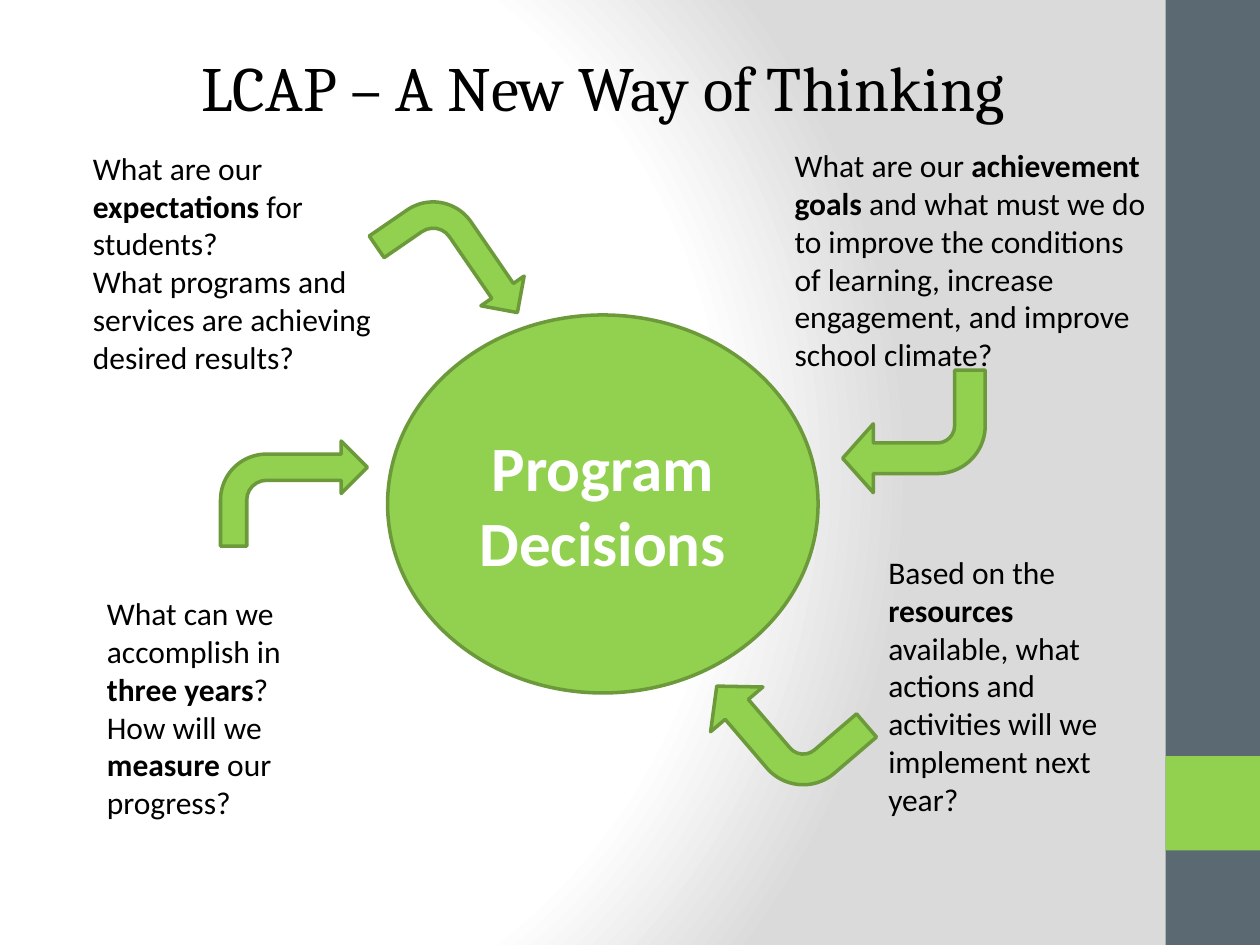
from pptx import Presentation
from pptx.dml.color import RGBColor
from pptx.enum.shapes import MSO_SHAPE
from pptx.enum.text import MSO_ANCHOR, MSO_AUTO_SIZE, PP_ALIGN
from pptx.oxml import parse_xml
from pptx.oxml.ns import nsdecls
from pptx.util import Pt

RECTANGLE, OVAL, BENT_ARROW = MSO_SHAPE.RECTANGLE, MSO_SHAPE.OVAL, MSO_SHAPE.BENT_ARROW
TOP, MIDDLE = MSO_ANCHOR.TOP, MSO_ANCHOR.MIDDLE
LEFT, CENTER = PP_ALIGN.LEFT, PP_ALIGN.CENTER
FIXED_SIZE = MSO_AUTO_SIZE.NONE

GREEN = RGBColor(0x92, 0xD0, 0x50)
DARK_GREEN = RGBColor(0x6C, 0x9A, 0x3B)
SLATE = RGBColor(0x5B, 0x69, 0x73)
GREY = RGBColor(0xDA, 0xDA, 0xDA)
BLACK = RGBColor(0, 0, 0)
WHITE = RGBColor(0xFF, 0xFF, 0xFF)

# Each question is a list of paragraphs; ** switches bold on and off
QUESTIONS = [
    ((46, 81.5, 180, 142), [
        "What are our **expectations** for students?",
        "What programs and services are achieving desired results?"]),
    ((447, 80, 215.5, 138), [
        "What are our **achievement goals **and what must we do to improve "
        "the conditions of learning, increase engagement, and improve "
        "school climate?"]),
    ((54, 336, 156, 138), [
        "What can we accomplish in **three years**?",
        "How will we **measure** our progress?"]),
    ((500.5, 312.5, 138, 160), [
        "Based on the **resources** available, what actions and activities "
        "will we implement next year?"]),
]

# Position, rotation and adjustments of each arrow
WIDE_BEND = (0.25, 0.281, 0.25, 0.391)
ARROWS = [
    ((126, 252, 84, 60), 0, ()),
    ((217.5, 122.5, 84, 60), 55.5, ()),
    ((407, 378, 81.5, 70), 229.4, WIDE_BEND),
    ((481.5, 211.5, 81.5, 70), 180, WIDE_BEND),
]


def write_text(text_frame, paragraphs, font="Calibri", size=18, color=BLACK,
               bold=False, align=LEFT, anchor=TOP):
    text_frame.word_wrap = True
    text_frame.auto_size = FIXED_SIZE
    text_frame.vertical_anchor = anchor
    for index, text in enumerate(paragraphs):
        paragraph = text_frame.add_paragraph() if index else text_frame.paragraphs[0]
        paragraph.alignment = align
        for part, piece in enumerate(text.split("**")):
            run = paragraph.add_run()
            run.text = piece
            run.font.name = font
            run.font.size = Pt(size)
            run.font.bold = bold or part % 2 == 1
            run.font.color.rgb = color


class SlideBuilder:
    def __init__(self, slide, fill=GREEN, outline=DARK_GREEN, line_width=2):
        self.slide = slide
        self.fill = fill
        self.outline = outline
        self.line_width = line_width

    def background(self, inner, outer):
        stops = "".join(
            f'<a:gs pos="{position}"><a:srgbClr val="{color}"/></a:gs>'
            for position, color in ((0, inner), (75000, inner), (100000, outer)))
        self.slide.element.cSld.insert(0, parse_xml(
            f'<p:bg {nsdecls("p", "a")}><p:bgPr><a:gradFill rotWithShape="1">'
            f'<a:gsLst>{stops}</a:gsLst><a:path path="circle">'
            '<a:fillToRect l="20000" t="50000" r="100000" b="50000"/></a:path>'
            '</a:gradFill><a:effectLst/></p:bgPr></p:bg>'))

    def title(self, box, text):
        title = self.slide.shapes.title
        title.left, title.top, title.width, title.height = map(Pt, box)
        write_text(title.text_frame, [text], font="Cambria", size=36)

    def shape(self, kind, box, fill=None):
        shape = self.slide.shapes.add_shape(kind, *map(Pt, box))
        shape.shadow.inherit = False
        shape.fill.solid()
        shape.fill.fore_color.rgb = fill or self.fill
        return shape

    def band(self, box, fill):
        self.shape(RECTANGLE, box, fill).line.fill.background()

    def outlined(self, kind, box):
        shape = self.shape(kind, box)
        shape.line.color.rgb = self.outline
        shape.line.width = Pt(self.line_width)
        return shape

    def arrow(self, box, rotation, adjustments):
        arrow = self.outlined(BENT_ARROW, box)
        arrow.rotation = rotation
        for index, value in enumerate(adjustments):
            arrow.adjustments[index] = value

    def text(self, box, paragraphs):
        text_box = self.slide.shapes.add_textbox(*map(Pt, box))
        write_text(text_box.text_frame, paragraphs)


def main():
    presentation = Presentation()
    presentation.slide_width, presentation.slide_height = Pt(720), Pt(540)
    title_only = presentation.slide_layouts[5]
    builder = SlideBuilder(presentation.slides.add_slide(title_only))

    # Background and side bands
    builder.background(WHITE, GREY)
    builder.band((666, 0, 54, 540), SLATE)
    builder.band((666, 432, 54, 54), GREEN)

    builder.title((108, 24, 525, 51), "LCAP – A New Way of Thinking")

    # Central decision
    center = builder.outlined(OVAL, (221.5, 180, 246, 216))
    write_text(center.text_frame, ["Program Decisions"], size=36, color=WHITE,
               bold=True, align=CENTER, anchor=MIDDLE)

    # Questions and the arrows that lead to the centre
    for box, paragraphs in QUESTIONS:
        builder.text(box, paragraphs)
    for box, rotation, adjustments in ARROWS:
        builder.arrow(box, rotation, adjustments)

    presentation.save("out.pptx")


if __name__ == "__main__":
    main()
